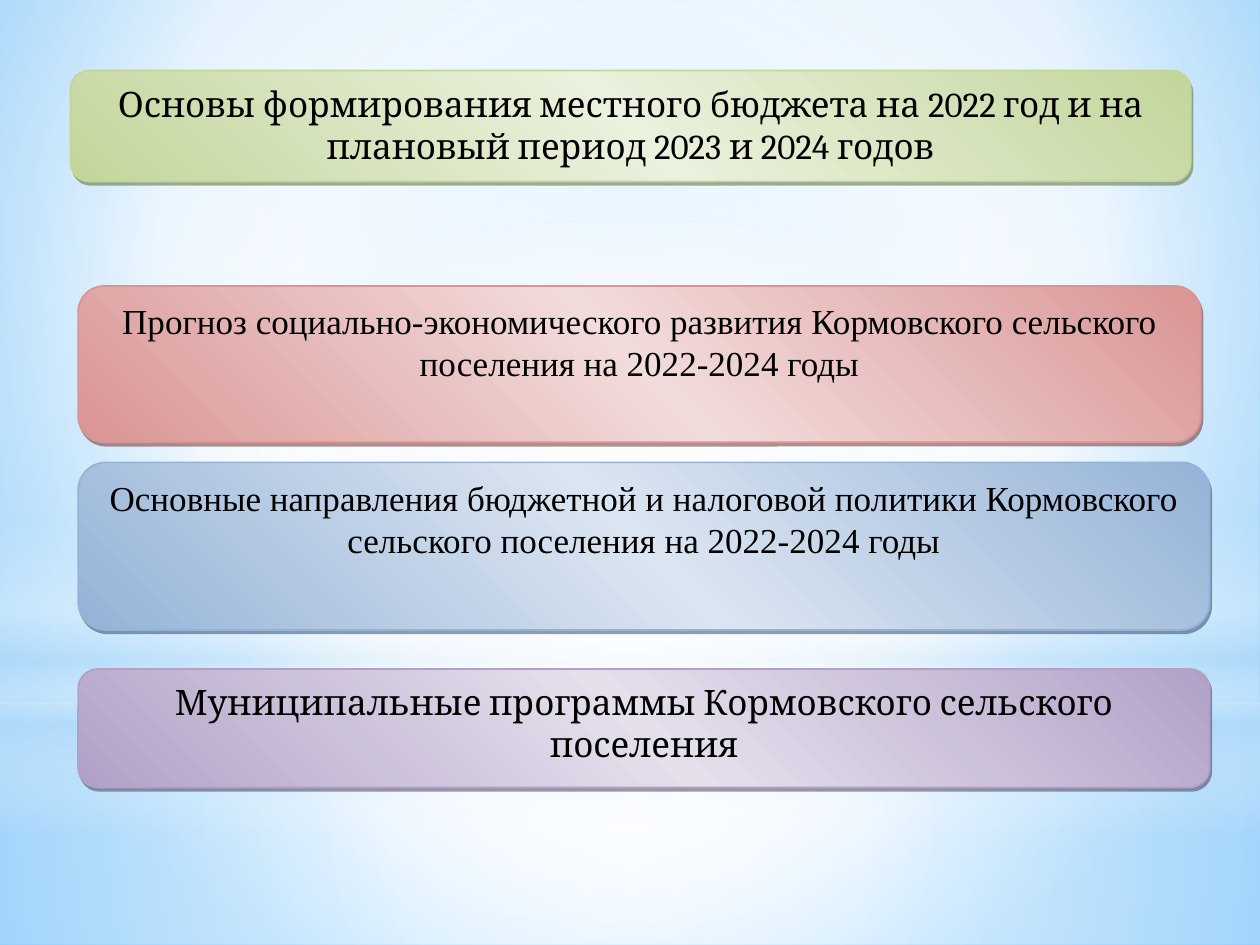
import lxml.etree
import pptx
import pptx.dml.color
import pptx.enum.shapes
import pptx.enum.text
import pptx.oxml.ns
import pptx.util

Inches = pptx.util.Inches
Pt = pptx.util.Pt
RGB = pptx.dml.color.RGBColor
SHAPES = pptx.enum.shapes.MSO_SHAPE
qn = pptx.oxml.ns.qn

BLACK = RGB(0x00, 0x00, 0x00)
WHITE = RGB(0xFF, 0xFF, 0xFF)
PALE_SKY = RGB(0xB4, 0xDC, 0xFA)
LIGHT_SKY = RGB(0x9E, 0xD5, 0xFF)
DEEP_SKY = RGB(0x5B, 0xB9, 0xFF)
GREEN = RGB(0xC2, 0xD6, 0x9B)
GREEN_LIGHT = RGB(0xEA, 0xF1, 0xDD)
GREEN_DARK = RGB(0x4E, 0x61, 0x28)
RED = RGB(0xD9, 0x95, 0x94)
RED_LIGHT = RGB(0xF2, 0xDB, 0xDB)
RED_DARK = RGB(0x62, 0x24, 0x23)
BLUE = RGB(0x95, 0xB3, 0xD7)
BLUE_LIGHT = RGB(0xDB, 0xE5, 0xF1)
BLUE_DARK = RGB(0x24, 0x3F, 0x60)
PURPLE = RGB(0xB2, 0xA1, 0xC7)
PURPLE_LIGHT = RGB(0xE5, 0xDF, 0xEC)
PURPLE_DARK = RGB(0x3F, 0x31, 0x51)

CENTRE = (50, 50, 50, 50)


def add_child(parent, tag, **attributes):
    values = {name: str(value) for name, value in attributes.items()}
    return lxml.etree.SubElement(parent, qn(tag), values)


def add_colour(parent, colour, opacity):
    tint = add_child(parent, "a:srgbClr", val=colour)
    if opacity < 100:
        add_child(tint, "a:alpha", val=opacity * 1000)


def set_gradient(fill, properties, stops, focus=None, angle=0):
    fill.solid()
    solid = properties.find(qn("a:solidFill"))
    gradient = lxml.etree.Element(qn("a:gradFill"), rotWithShape="1")
    stop_list = add_child(gradient, "a:gsLst")
    for position, colour, opacity in stops:
        stop = add_child(stop_list, "a:gs", pos=position * 1000)
        add_colour(stop, colour, opacity)
    if focus:
        circle = add_child(gradient, "a:path", path="circle")
        sides = {side: share * 1000 for side, share in zip("ltrb", focus)}
        add_child(circle, "a:fillToRect", **sides)
    else:
        add_child(gradient, "a:lin", ang=angle * 60000, scaled=1)
    properties.replace(solid, gradient)


def paint_background(slide):
    fill = slide.background.fill
    fill.solid()
    properties = slide.element.find(".//" + qn("p:bgPr"))
    stops = [(0, LIGHT_SKY, 100), (60, WHITE, 100), (100, DEEP_SKY, 100)]
    set_gradient(fill, properties, stops, focus=(20, 10, 20, 60))


def add_glow(slide, kind, top, height, stops, **direction):
    glow = slide.shapes.add_shape(kind, 0, Inches(top), Inches(10), Inches(height))
    glow.shadow.inherit = False
    glow.line.fill.background()
    set_gradient(glow.fill, glow.element.spPr, stops, **direction)


def add_shadow(panel, colour):
    panel.shadow.inherit = False
    effects = panel.element.spPr.find(qn("a:effectLst"))
    shadow = add_child(effects, "a:outerShdw", blurRad=0, dist=Pt(2.2),
                       dir=63 * 60000, algn="ctr", rotWithShape=0)
    add_colour(shadow, colour, 50)


def add_panel(slide, box, colours, font_name, wording):
    edge, middle, dark = colours
    panel = slide.shapes.add_shape(SHAPES.ROUNDED_RECTANGLE, *map(Inches, box))
    panel.adjustments[0] = 0.167
    stops = [(0, edge, 100), (50, middle, 100), (100, edge, 100)]
    set_gradient(panel.fill, panel.element.spPr, stops, angle=315)
    panel.line.color.rgb = edge
    panel.line.width = Pt(1)
    add_shadow(panel, dark)

    frame = panel.text_frame
    frame.word_wrap = True
    frame.vertical_anchor = pptx.enum.text.MSO_ANCHOR.TOP
    paragraph = frame.paragraphs[0]
    paragraph.alignment = pptx.enum.text.PP_ALIGN.CENTER
    paragraph.space_after = Pt(10)
    run = paragraph.add_run()
    run.text = wording
    run.font.name = font_name
    run.font.size = Pt(20)
    run.font.color.rgb = BLACK


def main():
    deck = pptx.Presentation()
    deck.slide_width, deck.slide_height = Inches(10), Inches(7.5)
    slide = deck.slides.add_slide(deck.slide_layouts[6])
    paint_background(slide)

    add_glow(slide, SHAPES.RECTANGLE, 5.58, 1.92,
             [(0, WHITE, 91), (37, WHITE, 76), (100, PALE_SKY, 79)], focus=CENTRE)
    add_glow(slide, SHAPES.RECTANGLE, 0, 5.58,
             [(0, WHITE, 89), (48, WHITE, 62), (100, PALE_SKY, 79)], focus=CENTRE)
    add_glow(slide, SHAPES.RECTANGLE, 4.12, 2.5,
             [(0, WHITE, 0), (29, WHITE, 30), (45, PALE_SKY, 40),
              (55, WHITE, 26), (65, PALE_SKY, 60), (100, WHITE, 0)], angle=90)
    add_glow(slide, SHAPES.OVAL, 1.75, 5.58,
             [(0, WHITE, 100), (56, WHITE, 0)], focus=CENTRE)

    panels = [
        ((0.56, 0.56, 8.89, 0.88), (GREEN, GREEN_LIGHT, GREEN_DARK), "Cambria",
         "Основы формирования местного бюджета на 2022 год и на плановый "
         "период 2023 и 2024 годов"),
        ((0.62, 2.27, 8.91, 1.24), (RED, RED_LIGHT, RED_DARK), "Times New Roman",
         "Прогноз социально-экономического развития Кормовского сельского "
         "поселения на 2022-2024 годы"),
        ((0.62, 3.67, 8.98, 1.33), (BLUE, BLUE_LIGHT, BLUE_DARK), "Times New Roman",
         "Основные направления бюджетной и налоговой политики Кормовского "
         "сельского поселения на 2022-2024 годы"),
        ((0.62, 5.31, 8.98, 0.94), (PURPLE, PURPLE_LIGHT, PURPLE_DARK), "Cambria",
         "Муниципальные программы Кормовского сельского поселения"),
    ]
    for box, colours, font_name, wording in panels:
        add_panel(slide, box, colours, font_name, wording)

    deck.save("out.pptx")


if __name__ == "__main__":
    main()
